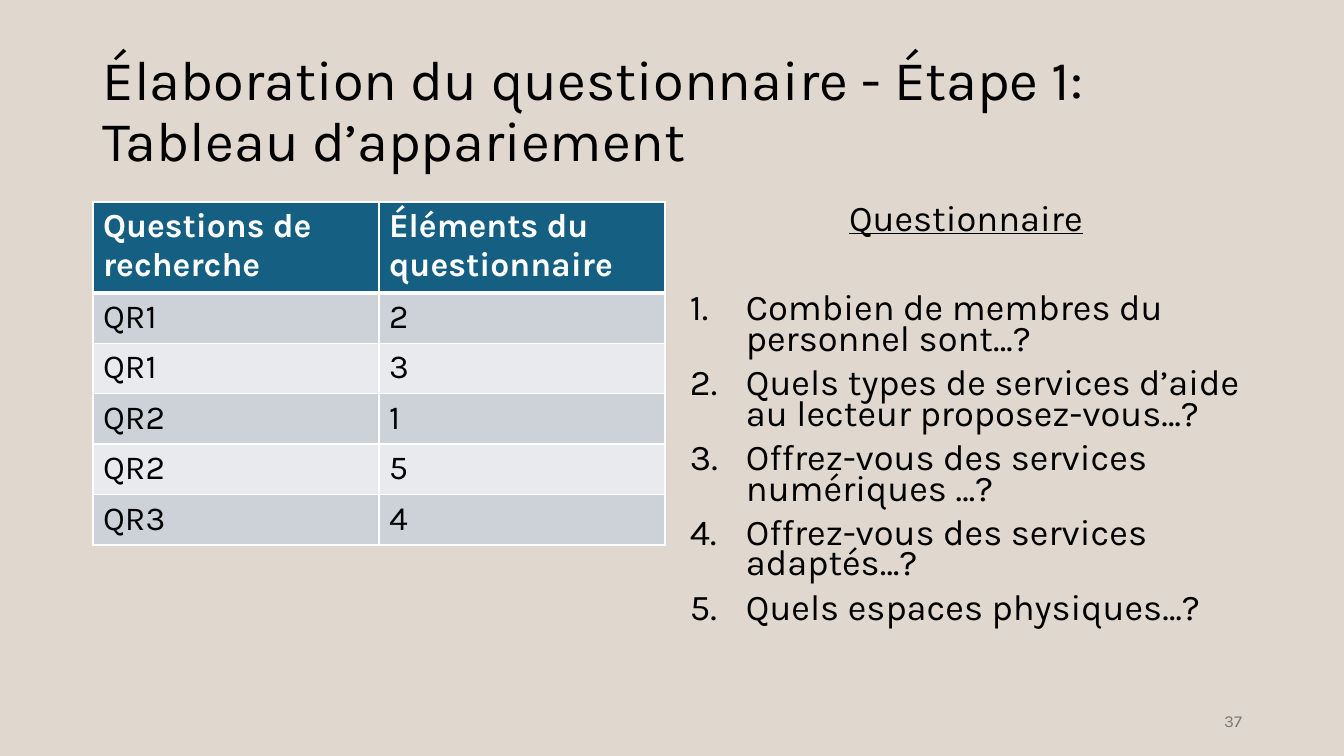
import lxml.etree
import pptx
import pptx.dml.color
import pptx.enum.text
import pptx.oxml.ns
import pptx.util

RGB = pptx.dml.color.RGBColor
ALIGN = pptx.enum.text.PP_ALIGN
ANCHOR = pptx.enum.text.MSO_ANCHOR
qn = pptx.oxml.ns.qn

SAND = RGB(0xE0, 0xD8, 0xCF)
BLACK = RGB(0x00, 0x00, 0x00)
WHITE = RGB(0xFF, 0xFF, 0xFF)
GREY = RGB(0x79, 0x79, 0x79)
TEAL = RGB(0x15, 0x60, 0x82)
DARK_BAND = RGB(0xCC, 0xD2, 0xD8)
LIGHT_BAND = RGB(0xE8, 0xEA, 0xED)

TITLE = "Élaboration du questionnaire - Étape 1: Tableau d’appariement"
PAIRINGS = [
    ("Questions de recherche", "Éléments du questionnaire"),
    ("QR1", "2"),
    ("QR1", "3"),
    ("QR2", "1"),
    ("QR2", "5"),
    ("QR3", "4"),
]
QUESTIONS = [
    "Combien de membres du personnel sont…?",
    "Quels types de services d’aide au lecteur proposez-vous…?",
    "Offrez-vous des services numériques …?",
    "Offrez-vous des services adaptés…?",
    "Quels espaces physiques…?",
]


def px(length):
    return pptx.util.Emu(round(length * 914400 / 100.8))


def write(para, text, size=24, color=BLACK, bold=False, underline=False,
          align=ALIGN.LEFT, line_spacing=None, space_before=None):
    para.alignment = align
    para.line_spacing = line_spacing
    if space_before is not None:
        para.space_before = pptx.util.Pt(space_before)
    span = para.add_run()
    span.text = text
    font = span.font
    font.name = "Karla"
    font.size = pptx.util.Pt(size)
    font.color.rgb = color
    font.bold = bold
    font.underline = underline


def number(para, indent):
    """Give the paragraph an automatic number in a hanging indent."""
    properties = para._p.get_or_add_pPr()
    properties.set("marL", str(px(indent)))
    properties.set("indent", str(-px(indent)))
    lxml.etree.SubElement(properties, qn("a:buFont"), typeface="+mj-lt")
    lxml.etree.SubElement(properties, qn("a:buAutoNum"), type="arabicPeriod")


def border(cell, top=1, bottom=1):
    """Draw white cell borders, with top and bottom widths in points."""
    properties = cell._tc.get_or_add_tcPr()
    sides = {"a:lnL": 1, "a:lnR": 1, "a:lnT": top, "a:lnB": bottom}
    for position, (side, width) in enumerate(sides.items()):
        line = lxml.etree.Element(qn(side), w=str(pptx.util.Pt(width)))
        fill = lxml.etree.SubElement(line, qn("a:solidFill"))
        lxml.etree.SubElement(fill, qn("a:srgbClr"), val=str(WHITE))
        properties.insert(position, line)


class SlideBuilder:
    def __init__(self, slide, background):
        self.slide = slide
        slide.background.fill.solid()
        slide.background.fill.fore_color.rgb = background

    def frame(self, left, top, width, height, anchor=ANCHOR.TOP):
        box = self.slide.shapes.add_textbox(px(left), px(top), px(width), px(height))
        box.text_frame.word_wrap = True
        box.text_frame.vertical_anchor = anchor
        return box.text_frame

    def label(self, text, left, top, width, height, **style):
        frame = self.frame(left, top, width, height, ANCHOR.MIDDLE)
        write(frame.paragraphs[0], text, **style)

    def numbered_list(self, heading, items, left, top, width, height):
        frame = self.frame(left, top, width, height)
        style = {"size": 25.9, "line_spacing": 0.7}
        write(frame.paragraphs[0], heading, underline=True, align=ALIGN.CENTER,
              space_before=10, **style)
        for index, item in enumerate(items):
            para = frame.add_paragraph()
            write(para, item, space_before=10 if index else 42, **style)
            number(para, 56)

    def table(self, rows, left, top, column_width, header_height, row_height):
        columns = len(rows[0])
        height = header_height + row_height * (len(rows) - 1)
        table = self.slide.shapes.add_table(
            len(rows), columns, px(left), px(top),
            px(column_width * columns), px(height)).table
        for column in table.columns:
            column.width = px(column_width)
        for r, values in enumerate(rows):
            header = r == 0
            table.rows[r].height = px(header_height if header else row_height)
            band = TEAL if header else DARK_BAND if r % 2 else LIGHT_BAND
            for c, value in enumerate(values):
                cell = table.cell(r, c)
                cell.fill.solid()
                cell.fill.fore_color.rgb = band
                border(cell, top=3 if r == 1 else 1, bottom=3 if header else 1)
                write(cell.text_frame.paragraphs[0], value, bold=header,
                      color=WHITE if header else BLACK)


def main():
    deck = pptx.Presentation()
    deck.slide_width, deck.slide_height = px(1344), px(756)
    page = SlideBuilder(deck.slides.add_slide(deck.slide_layouts[6]), SAND)
    page.label(TITLE, 93, 40, 1159, 146, size=40, line_spacing=0.9)
    page.table(PAIRINGS, 93, 202, 286, 88, 49)
    page.numbered_list("Questionnaire", QUESTIONS, 680, 202, 572, 480)
    page.label("37", 950, 701, 302, 40, size=12, color=GREY, align=ALIGN.RIGHT)
    deck.save("out.pptx")


if __name__ == "__main__":
    main()
